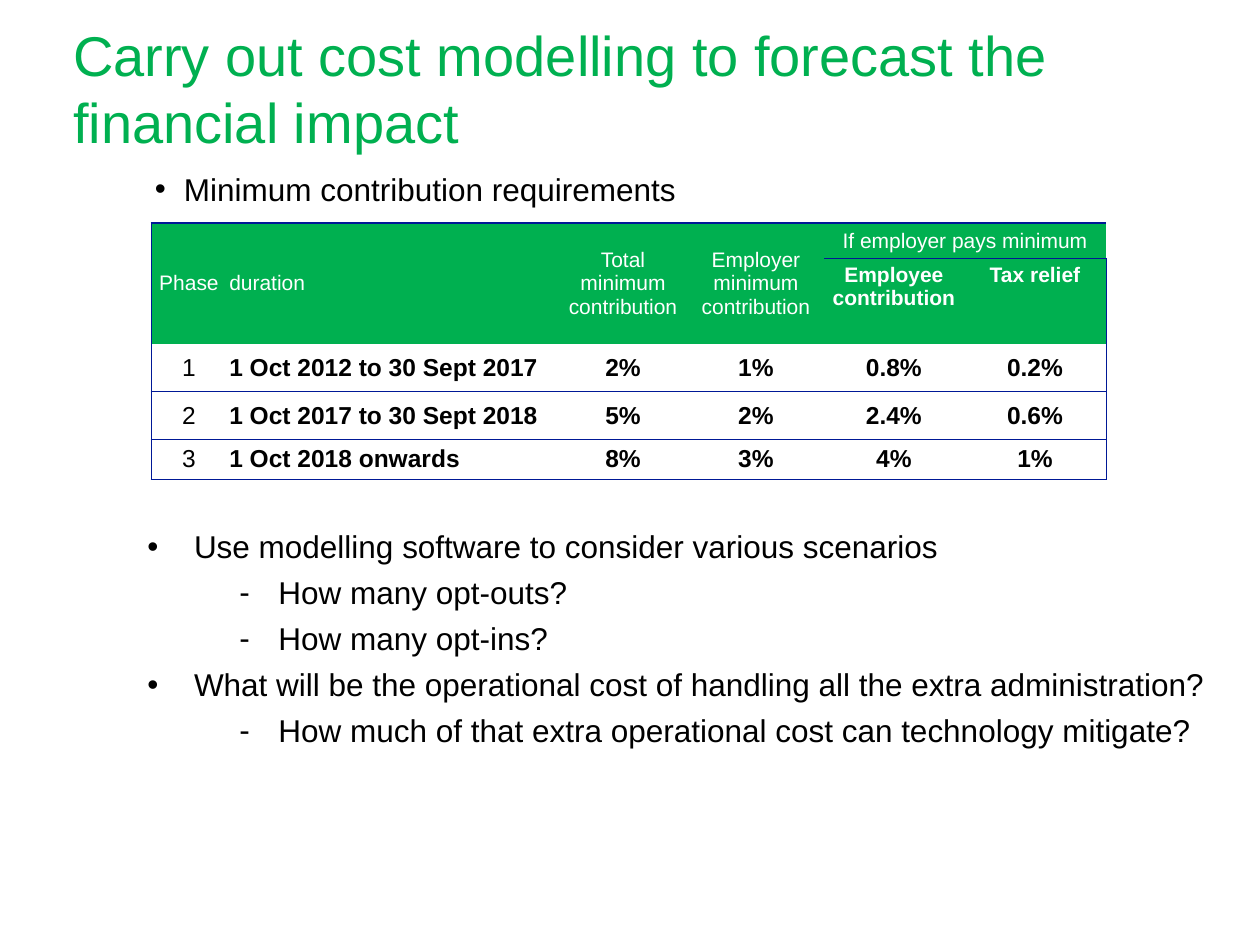
from dataclasses import dataclass

from lxml.etree import SubElement
from pptx import Presentation
from pptx.dml.color import RGBColor as RGB
from pptx.enum.text import MSO_ANCHOR as Anchor, PP_ALIGN as Align
from pptx.oxml.ns import qn
from pptx.util import Inches, Pt


@dataclass(frozen=True)
class Theme:
    font: str = "Arial"
    green: RGB = RGB(0x00, 0xB0, 0x50)
    black: RGB = RGB(0, 0, 0)
    white: RGB = RGB(0xFF, 0xFF, 0xFF)
    border: str = "001896"
    border_width: float = 0.75
    title_size: int = 32
    text_size: int = 18
    header_size: int = 12
    cell_size: int = 14


THEME = Theme()
COLUMNS = [0.6, 2.63, 1.03, 1.08, 1.11, 1.13]
ROWS = [0.28, 0.65, 0.38, 0.38, 0.31]
CELLS = [
    ["Phase", "duration", "Total minimum contribution",
     "Employer minimum contribution", "If employer pays minimum", ""],
    ["", "", "", "", "Employee contribution", "Tax relief"],
    ["1", "1 Oct 2012 to 30 Sept 2017", "2%", "1%", "0.8%", "0.2%"],
    ["2", "1 Oct 2017 to 30 Sept 2018", "5%", "2%", "2.4%", "0.6%"],
    ["3", "1 Oct 2018 onwards", "8%", "3%", "4%", "1%"],
]
TOPIC = ("•", 0.23, 0.23)
POINT = ("•", 0.64, 0.37)
DETAIL = ("-", 1.31, 0.31)
SCENARIOS = [
    ("Use modelling software to consider various scenarios", POINT),
    ("How many opt-outs?", DETAIL),
    ("How many opt-ins?", DETAIL),
    ("What will be the operational cost of handling all the extra administration?", POINT),
    ("How much of that extra operational cost can technology mitigate?", DETAIL),
]


def apply(target, values):
    for name, value in values.items():
        setattr(target, name, value)


def add_run(p, text, size, color, bold=False):
    r = p.add_run()
    r.text = text
    apply(r.font, {"name": THEME.font, "size": Pt(size), "bold": bold})
    r.font.color.rgb = color


def add_box(s, box, anchor=Anchor.TOP):
    tf = s.shapes.add_textbox(*map(Inches, box)).text_frame
    apply(tf, {"word_wrap": True, "vertical_anchor": anchor, "margin_left": 0,
               "margin_right": 0, "margin_top": 0, "margin_bottom": 0})
    return tf


def add_bullets(s, box, items, anchor=Anchor.TOP):
    tf = add_box(s, box, anchor)
    for i, (text, (mark, left, hanging)) in enumerate(items):
        p = tf.add_paragraph() if i else tf.paragraphs[0]
        pPr = p._p.get_or_add_pPr()
        pPr.set("marL", str(Inches(left)))
        pPr.set("indent", str(-Inches(hanging)))
        SubElement(pPr, qn("a:buFont"), typeface=THEME.font)
        SubElement(pPr, qn("a:buChar"), char=mark)
        p.line_spacing = 0.9
        if i:
            p.space_before = Pt(6.8)
        add_run(p, text, THEME.text_size, THEME.black)


def set_borders(cell, sides):
    tcPr = cell._tc.get_or_add_tcPr()
    for side in "LRTB":
        ln = SubElement(tcPr, qn(f"a:ln{side}"), w=str(Pt(THEME.border_width)))
        if side in sides:
            fill = SubElement(ln, qn("a:solidFill"))
            SubElement(fill, qn("a:srgbClr"), val=THEME.border)
        else:
            SubElement(ln, qn("a:noFill"))


def cell_sides(row, col):
    rules = {
        "L": col == 0,
        "R": col == len(COLUMNS) - 1,
        "T": row in (0, 3, 4) or (row == 1 and col >= 4),
        "B": row >= 2 or (row == 0 and col >= 4),
    }
    return [side for side, shown in rules.items() if shown]


def format_cell(cell, row, col):
    header = row < 2
    set_borders(cell, cell_sides(row, col))
    if header:
        cell.fill.solid()
        cell.fill.fore_color.rgb = THEME.green
    else:
        cell.fill.background()
    apply(cell, {
        "vertical_anchor": Anchor.TOP if row == 1 else Anchor.MIDDLE,
        "margin_left": Inches(0.02), "margin_right": Inches(0.02),
        "margin_top": Inches(0.04), "margin_bottom": Inches(0.04),
    })
    p = cell.text_frame.paragraphs[0]
    p.alignment = Align.LEFT if col == 1 else Align.CENTER
    if CELLS[row][col]:
        add_run(p, CELLS[row][col],
                THEME.header_size if header else THEME.cell_size,
                THEME.white if header else THEME.black,
                row == 1 or (row > 1 and col > 0))


def add_contributions(s, left, top):
    frame = s.shapes.add_table(len(ROWS), len(COLUMNS), Inches(left), Inches(top),
                               Inches(sum(COLUMNS)), Inches(sum(ROWS)))
    table = frame.table
    apply(table, {"first_row": False, "horz_banding": False})
    for column, width in zip(table.columns, COLUMNS):
        column.width = Inches(width)
    for row, height in zip(table.rows, ROWS):
        row.height = Inches(height)
    for row in range(len(ROWS)):
        for col in range(len(COLUMNS)):
            format_cell(table.cell(row, col), row, col)
    for col in range(4):
        table.cell(0, col).merge(table.cell(1, col))
    table.cell(0, 4).merge(table.cell(0, 5))


def main():
    prs = Presentation()
    apply(prs, {"slide_width": Inches(10), "slide_height": Inches(7.5)})
    s = prs.slides.add_slide(prs.slide_layouts[6])
    title = add_box(s, (0.58, 0.16, 9.15, 0.76))
    add_run(title.paragraphs[0], "Carry out cost modelling to forecast the financial impact",
            THEME.title_size, THEME.green)
    add_bullets(s, (1.23, 1.32, 8.46, 0.39),
                [("Minimum contribution requirements", TOPIC)], Anchor.MIDDLE)
    add_contributions(s, 1.2, 1.77)
    add_bullets(s, (0.9, 4.22, 9.14, 1.15), SCENARIOS)
    prs.save("out.pptx")


if __name__ == "__main__":
    main()
